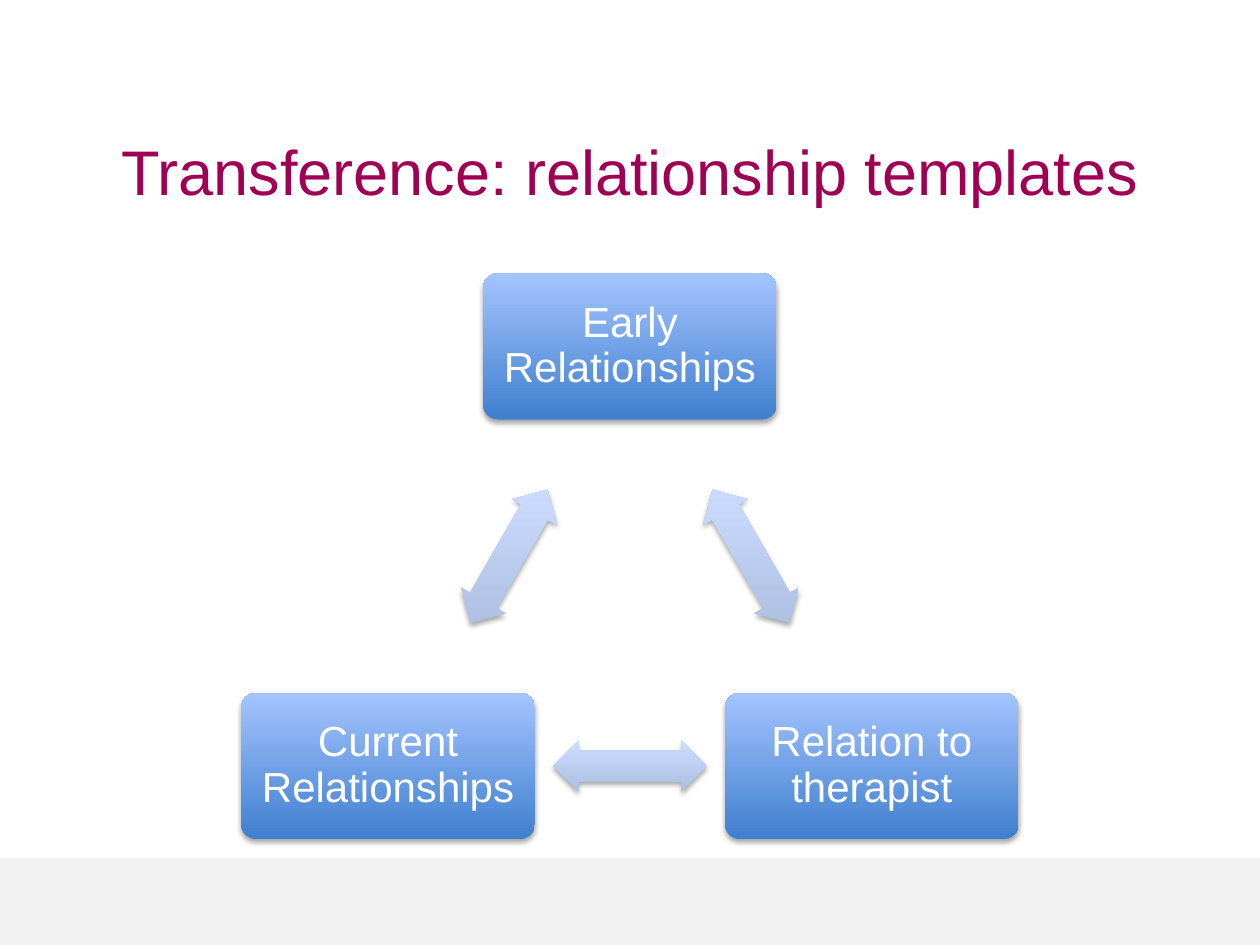
import math

import lxml.etree
import pptx
import pptx.dml.color
import pptx.enum.shapes
import pptx.enum.text
import pptx.oxml.ns
import pptx.util

Inches = pptx.util.Inches
Shape = pptx.enum.shapes.MSO_SHAPE

TITLE = "Transference: relationship templates"
RELATIONSHIPS = [
    ("Early Relationships", (5, 2.75)),
    ("Relation to therapist", (6.92, 6.08)),
    ("Current Relationships", (3.08, 6.08)),
]
BOX_SIZE = (2.33, 1.16)
ARROW_SIZE = (1.22, 0.41)
BOX_COLOURS = ("3F7FCE", "A4C4FF")
ARROW_COLOURS = ("ADBFE1", "CCDDFF")


def colour(value):
    return pptx.dml.color.RGBColor.from_string(value)


def add_shadow(shape):
    shape.shadow.inherit = False
    effects = shape._element.spPr.find(pptx.oxml.ns.qn("a:effectLst"))
    outer = lxml.etree.SubElement(
        effects, pptx.oxml.ns.qn("a:outerShdw"),
        blurRad=str(pptx.util.Pt(3.1)), dist=str(pptx.util.Pt(1.8)),
        dir="5400000", rotWithShape="0")
    black = lxml.etree.SubElement(outer, pptx.oxml.ns.qn("a:srgbClr"), val="000000")
    lxml.etree.SubElement(black, pptx.oxml.ns.qn("a:alpha"), val="35000")


def add_centred(page, kind, centre, size, colours):
    left, top = (middle - length / 2 for middle, length in zip(centre, size))
    shape = page.shapes.add_shape(
        kind, Inches(left), Inches(top), Inches(size[0]), Inches(size[1]))
    shape.line.fill.background()
    shape.fill.gradient()
    shape.fill.gradient_angle = 90
    for stop, value in zip(shape.fill.gradient_stops, colours):
        stop.color.rgb = colour(value)
    gradient = shape._element.spPr.find(pptx.oxml.ns.qn("a:gradFill"))
    gradient.set("rotWithShape", "0")
    add_shadow(shape)
    return shape


def write(shape, text, size, value):
    frame = shape.text_frame
    frame.word_wrap = True
    frame.vertical_anchor = pptx.enum.text.MSO_ANCHOR.MIDDLE
    para = frame.paragraphs[0]
    para.alignment = pptx.enum.text.PP_ALIGN.CENTER
    span = para.add_run()
    span.text = text
    span.font.name = "Arial"
    span.font.size = pptx.util.Pt(size)
    span.font.color.rgb = colour(value)
    return para


def add_relationship(page, text, centre):
    box = add_centred(page, Shape.ROUNDED_RECTANGLE, centre, BOX_SIZE, BOX_COLOURS)
    box.adjustments[0] = 0.1
    frame = box.text_frame
    frame.margin_left = frame.margin_right = Inches(0.13)
    frame.margin_top = frame.margin_bottom = Inches(0.13)
    write(box, text, 24, "FFFFFF").line_spacing = 0.9


def add_arrow(page, start, end):
    centre = [(a + b) / 2 for a, b in zip(start, end)]
    arrow = add_centred(page, Shape.LEFT_RIGHT_ARROW, centre, ARROW_SIZE, ARROW_COLOURS)
    arrow.adjustments[0] = 0.6
    arrow.adjustments[1] = 0.5
    angle = math.degrees(math.atan2(end[1] - start[1], end[0] - start[0]))
    arrow.rotation = round(angle) % 360


def main():
    deck = pptx.Presentation()
    deck.slide_width, deck.slide_height = Inches(10), Inches(7.5)
    page = deck.slides.add_slide(deck.slide_layouts[5])

    footer = page.shapes.add_shape(
        Shape.RECTANGLE, 0, Inches(6.81), Inches(10), Inches(0.69))
    footer.shadow.inherit = False
    footer.fill.solid()
    footer.fill.fore_color.rgb = colour("F2F2F2")
    footer.line.fill.background()

    title = page.shapes.title
    title.left, title.top = Inches(0.75), Inches(1.01)
    title.width, title.height = Inches(8.5), Inches(0.68)
    write(title, TITLE, 36, "A00054")

    for index, (text, centre) in enumerate(RELATIONSHIPS):
        following = RELATIONSHIPS[(index + 1) % len(RELATIONSHIPS)][1]
        add_relationship(page, text, centre)
        add_arrow(page, centre, following)

    deck.save("out.pptx")


if __name__ == "__main__":
    main()
